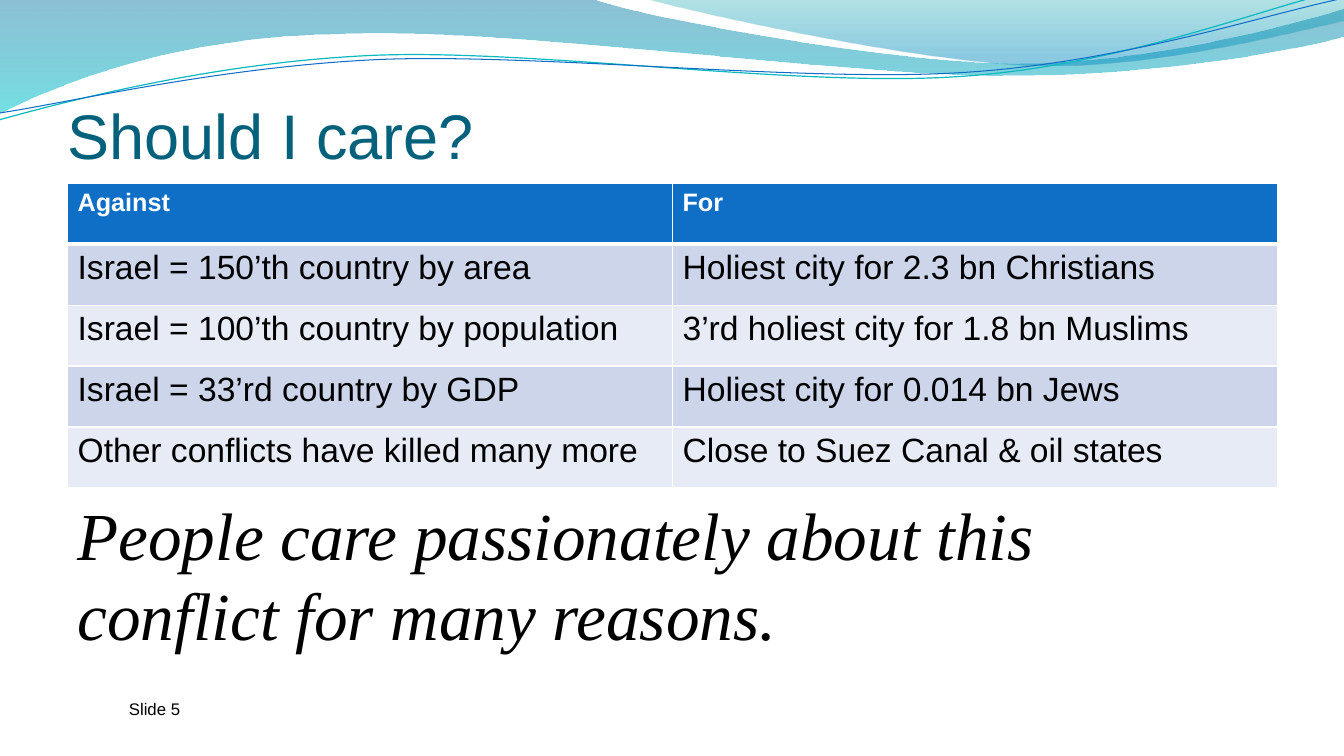
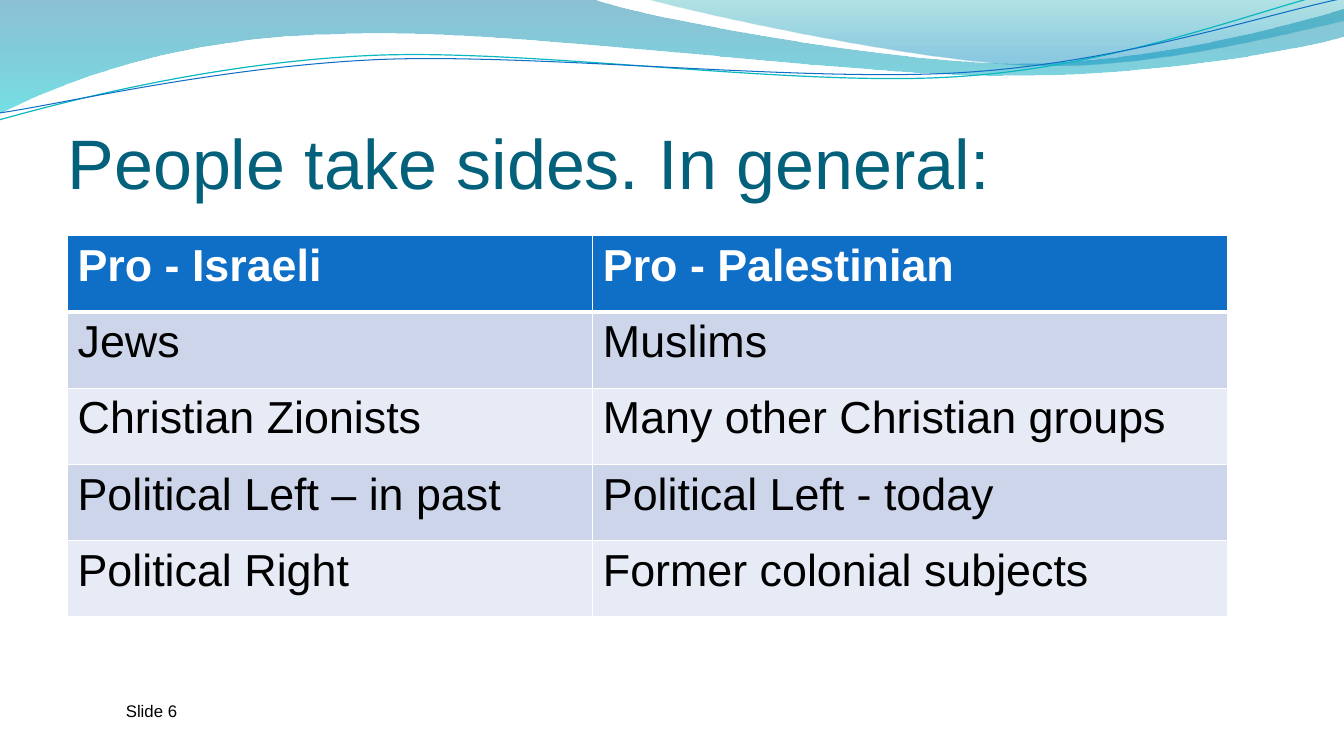
from math import cos, radians, sin

from lxml.etree import SubElement
from pptx import Presentation
from pptx.dml.color import RGBColor
from pptx.enum.text import MSO_ANCHOR, MSO_AUTO_SIZE, PP_ALIGN
from pptx.oxml.ns import qn
from pptx.util import Inches, Pt

COLORS = {
    "title": "04617B", "text": "000000", "white": "FFFFFF",
    "header": "0F6FC6", "odd_row": "CCD5EA", "even_row": "E7EBF5",
    "teal_line": "0AB8BF", "blue_line": "0F6FC6",
    "wide_top": "0074A1", "wide_bottom": "00C6CF",
    "right_top": "00A1A9", "right_bottom": "008BBF",
}
BODY_FONT = "Arial"
QUOTE_FONT = "Times New Roman"
LEFT = 0.67
LINE_ROTATION = 357.3

WAVE_BANDS = [
    {"start": (0, 0), "box": (-0.01, -0.01, 13.36, 1.14),
     "segments": [
         [(5.87, -0.01)],
         [(6.34, 0.17), (8.85, 0.63), (10.11, 0.63)],
         [(11.38, 0.63), (12.78, 0.26), (13.33, 0.09)],
         [(13.35, 0.36)],
         [(13.11, 0.44), (11.6, 0.76), (9.94, 0.75)],
         [(8.29, 0.75), (5.09, 0.28), (3.43, 0.34)],
         [(1.72, 0.36), (0.61, 0.83), (-0.01, 1.13)],
         [(0, 0)]],
     "stops": [(0, "wide_top", 45), (1, "wide_bottom", 55)]},
    {"start": (6.39, -0.01), "box": (6.39, -0.01, 6.94, 0.7),
     "segments": [
         [(6.79, 0.11), (9.09, 0.62), (10.25, 0.65)],
         [(11.41, 0.69), (12.82, 0.32), (13.33, 0.21)],
         [(13.33, 0)],
         [(6.39, -0.01)]],
     "stops": [(0, "right_top", 30), (0.8, "right_bottom", 45)]},
]
WAVE_LINES = [
    {"start": (-0.01, 1.19), "box": (-0.03, 0.22, 13.36, 0.71),
     "segments": [
         [(0.64, 1.01), (2.11, 0.62), (3.69, 0.55)],
         [(5.27, 0.48), (7.9, 0.87), (9.5, 0.76)],
         [(11.1, 0.66), (12.52, 0.08), (13.31, -0.1)]],
     "color": "teal_line", "width": 0.85},
    {"start": (0, 1.12), "box": (-0.02, 0.3, 13.38, 0.58),
     "segments": [
         [(0.63, 1.03), (2.18, 0.66), (3.78, 0.59)],
         [(5.37, 0.53), (7.96, 0.82), (9.55, 0.72)],
         [(11.15, 0.62), (12.55, 0.14), (13.34, -0.02)]],
     "color": "blue_line", "width": 0.75},
]

SLIDES = [
    {"title": ("Should I care?", (LEFT, 1, 12, 0.71), 45),
     "table": {
         "box": (LEFT, 1.82, 12, 3.02), "columns": (6, 6),
         "header_size": 18, "body_size": 24,
         "rows": [
             ("Against", "For"),
             ("Israel = 150’th country by area",
              "Holiest city for 2.3 bn Christians"),
             ("Israel = 100’th country by population",
              "3’rd holiest city for 1.8 bn Muslims"),
             ("Israel = 33’rd country by GDP", "Holiest city for 0.014 bn Jews"),
             ("Other conflicts have killed many more",
              "Close to Suez Canal & oil states")]},
     "quote": "People care passionately about this conflict for many reasons.",
     "footer": ("Slide 5", (1.18, 6.88, 2.33, 0.4))},
    {"title": ("People take sides. In general:", (LEFT, 0.77, 12, 1.25), 50),
     "table": {
         "box": (LEFT, 2.34, 11.51, 3.78), "columns": (5.21, 6.3),
         "header_size": 32, "body_size": 32,
         "rows": [
             ("Pro - Israeli", "Pro - Palestinian"),
             ("Jews", "Muslims"),
             ("Christian Zionists", "Many other Christian groups"),
             ("Political Left – in past", "Political Left - today"),
             ("Political Right", "Former colonial subjects")]},
     "footer": ("Slide 6", (1.15, 6.9, 2.33, 0.4))},
]


def rgb(name):
    """Return the named colour."""
    return RGBColor.from_string(COLORS[name])


def set_attributes(target, values):
    """Set each named attribute on the target."""
    for name, value in values.items():
        setattr(target, name, value)


def place(shape, box):
    """Move and size a shape in inches."""
    names = ("left", "top", "width", "height")
    set_attributes(shape, dict(zip(names, map(Inches, box))))


def write_text(text_frame, text, size, color="text", name=BODY_FONT, **styles):
    """Write one left-aligned, formatted paragraph."""
    text_frame.text = text
    paragraph = text_frame.paragraphs[0]
    paragraph.alignment = PP_ALIGN.LEFT
    font = paragraph.runs[0].font
    set_attributes(font, {"name": name, "size": Pt(size), **styles})
    font.color.rgb = rgb(color)


def local_point(point, box, rotation):
    """Map a slide point into the unrotated box, in EMU."""
    left, top, width, height = box
    angle = radians(-rotation)
    x = point[0] - left - width / 2
    y = point[1] - top - height / 2
    return (Inches(x * cos(angle) - y * sin(angle) + width / 2),
            Inches(x * sin(angle) + y * cos(angle) + height / 2))


def add_curve(slide, start, segments, box, close, rotation=0):
    """Add a freeform made of straight and cubic segments."""
    builder = slide.shapes.build_freeform(*map(Inches, start))
    builder.add_line_segments(
        [tuple(map(Inches, segment[-1])) for segment in segments], close=close)
    shape = builder.convert_to_shape()
    shape.shadow.inherit = False
    place(shape, box)
    shape.rotation = rotation
    outline = next(shape.element.iter(qn("a:path")))
    for child in list(outline):
        outline.remove(child)
    outline.set("w", str(shape.width))
    outline.set("h", str(shape.height))
    tags = {1: "a:lnTo", 3: "a:cubicBezTo"}
    steps = [("a:moveTo", [start])]
    steps += [(tags[len(segment)], segment) for segment in segments]
    for tag, points in steps:
        command = SubElement(outline, qn(tag))
        for point in points:
            x, y = local_point(point, box, rotation)
            SubElement(command, qn("a:pt"), x=str(x), y=str(y))
    if close:
        SubElement(outline, qn("a:close"))
    return shape


def add_wave_band(slide, stops, **curve):
    """Add a wave filled with a translucent vertical gradient."""
    shape = add_curve(slide, close=True, **curve)
    shape.line.fill.background()
    shape.fill.gradient()
    shape.fill.gradient_angle = 270
    for stop, (position, color, _) in zip(shape.fill.gradient_stops, stops):
        stop.position = position
        stop.color.rgb = rgb(color)
    color_elements = shape.element.spPr.iter(qn("a:srgbClr"))
    for element, (_, _, opacity) in zip(color_elements, stops):
        SubElement(element, qn("a:alpha"), val=str(opacity * 1000))
    return shape


def add_wave_line(slide, color, width, **curve):
    """Add a thin unfilled wave."""
    shape = add_curve(slide, close=False, rotation=LINE_ROTATION, **curve)
    shape.fill.background()
    shape.line.color.rgb = rgb(color)
    shape.line.width = Pt(width)
    return shape


def decorate_layout(layout, slide):
    """Draw the waves and move them behind the layout's placeholders."""
    waves = [add_wave_band(slide, **band) for band in WAVE_BANDS]
    waves += [add_wave_line(slide, **line) for line in WAVE_LINES]
    for index, shape in enumerate(waves):
        shape.element.nvSpPr.cNvPr.set("id", str(100 + index))
        layout.shapes.element.insert(2 + index, shape.element)


def format_title(slide, text, box, size):
    """Fill the title placeholder."""
    title = slide.shapes.title
    place(title, box)
    set_attributes(title.text_frame, {
        "margin_left": 0, "margin_right": 0, "margin_bottom": 0,
        "margin_top": Inches(0.05), "vertical_anchor": MSO_ANCHOR.BOTTOM,
        "auto_size": MSO_AUTO_SIZE.NONE, "word_wrap": True})
    write_text(title.text_frame, text, size, "title")


def add_text(slide, text, box, size, **styles):
    """Add a wrapped text box."""
    text_frame = slide.shapes.add_textbox(*map(Inches, box)).text_frame
    text_frame.word_wrap = True
    write_text(text_frame, text, size, **styles)


def set_borders(cell, top_width, bottom_width):
    """Give a cell white borders."""
    properties = cell._tc.get_or_add_tcPr()
    for side, width in {"L": 1, "R": 1, "T": top_width, "B": bottom_width}.items():
        line = SubElement(properties, qn(f"a:ln{side}"), w=str(Pt(width)))
        fill = SubElement(line, qn("a:solidFill"))
        SubElement(fill, qn("a:srgbClr"), val=COLORS["white"])


def add_table(slide, box, columns, rows, header_size, body_size):
    """Add a banded table with equal rows."""
    frame = slide.shapes.add_table(len(rows), len(columns), *map(Inches, box))
    table = frame.table
    for column, width in zip(table.columns, columns):
        column.width = Inches(width)
    for row_index, texts in enumerate(rows):
        header = row_index == 0
        band = "header" if header else ("even_row", "odd_row")[row_index % 2]
        for column_index, text in enumerate(texts):
            cell = table.cell(row_index, column_index)
            set_borders(cell, 3 if row_index == 1 else 1, 3 if header else 1)
            cell.fill.solid()
            cell.fill.fore_color.rgb = rgb(band)
            write_text(cell.text_frame, text,
                       header_size if header else body_size,
                       "white" if header else "text", bold=header)


def main():
    """Build and save the presentation."""
    presentation = Presentation()
    set_attributes(presentation, {"slide_width": Inches(13.33),
                                  "slide_height": Inches(7.5)})
    layout = presentation.slide_layouts[5]
    for content in SLIDES:
        slide = presentation.slides.add_slide(layout)
        if len(presentation.slides) == 1:
            decorate_layout(layout, slide)
        format_title(slide, *content["title"])
        add_table(slide, **content["table"])
        if "quote" in content:
            add_text(slide, content["quote"], (LEFT, 4.84, 10.63, 1.72), 48,
                     name=QUOTE_FONT, italic=True)
        add_text(slide, *content["footer"], 12)
    presentation.save("out.pptx")


if __name__ == "__main__":
    main()
